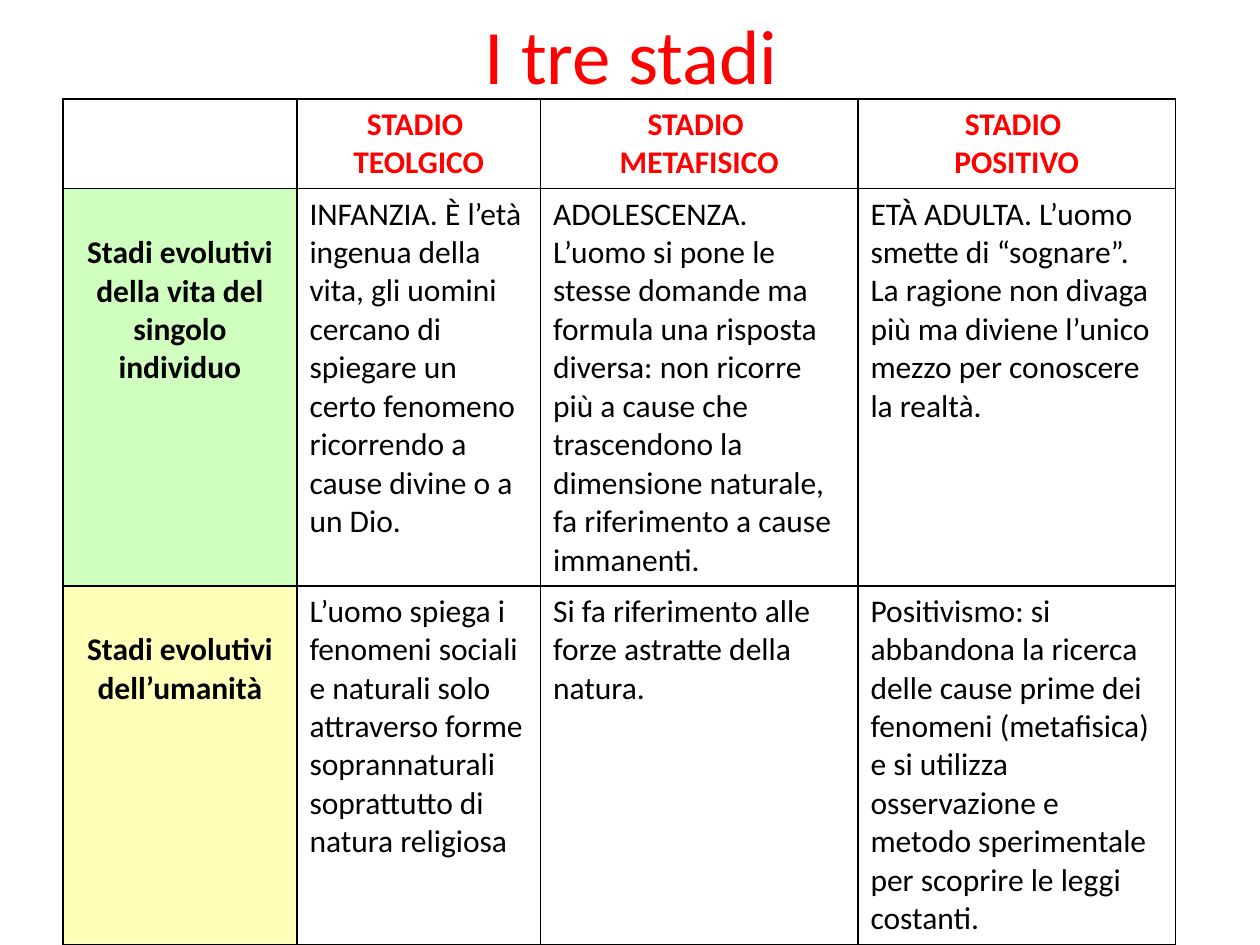
import pptx
import pptx.dml.color
import pptx.enum.text
import pptx.oxml
import pptx.oxml.ns
import pptx.util

Pt = pptx.util.Pt
ALIGN = pptx.enum.text.PP_ALIGN
ANCHOR = pptx.enum.text.MSO_ANCHOR
COLORS = {"red": "FF0000", "black": "000000", "white": "FFFFFF",
          "green": "CFFEBE", "yellow": "FFFFB9"}

# Content
TITLE = "I tre stadi"
HEADINGS = ["", "STADIO \nTEOLGICO", "STADIO \nMETAFISICO", "STADIO \nPOSITIVO"]
STAGES = [
    ("green", [
        "Stadi evolutivi della vita del singolo individuo",
        "INFANZIA. È l’età ingenua della vita, gli uomini cercano di spiegare un "
        "certo fenomeno ricorrendo a cause divine o a un Dio.",
        "ADOLESCENZA. L’uomo si pone le stesse domande ma formula una risposta "
        "diversa: non ricorre più a cause che trascendono la dimensione naturale, "
        "fa riferimento a cause immanenti.",
        "ETÀ ADULTA. L’uomo smette di “sognare”. La ragione non divaga più ma "
        "diviene l’unico mezzo per conoscere la realtà.",
    ]),
    ("yellow", [
        "Stadi evolutivi dell’umanità",
        "L’uomo spiega i fenomeni sociali e naturali solo attraverso forme "
        "soprannaturali soprattutto di natura religiosa",
        "Si fa riferimento alle forze astratte della natura.",
        "Positivismo: si abbandona la ricerca delle cause prime dei fenomeni "
        "(metafisica) e si utilizza osservazione e metodo sperimentale per "
        "scoprire le leggi costanti.",
    ]),
]
COLUMN_WIDTHS = [133.7, 139.2, 181.4, 181.4]
ROW_HEIGHTS = [50, 216, 197]
LABEL_TOP = 25.6  # cell margin plus one line of text


def rgb(name):
    return pptx.dml.color.RGBColor.from_string(COLORS[name])


def write(frame, text, size=18, color="black", bold=False, align=ALIGN.LEFT):
    for index, line in enumerate(text.split("\n")):
        para = frame.paragraphs[0] if index == 0 else frame.add_paragraph()
        para.alignment = align
        para.font.size = Pt(size)
        span = para.add_run()
        span.text = line
        span.font.name = "Calibri"
        span.font.size = Pt(size)
        span.font.bold = bold
        span.font.color.rgb = rgb(color)


def style_cell(cell, fill):
    properties = cell._tc.get_or_add_tcPr()
    for side in ("lnL", "lnR", "lnT", "lnB"):
        properties.append(pptx.oxml.parse_xml(
            f'<a:{side} {pptx.oxml.ns.nsdecls("a")} w="{Pt(1)}"><a:solidFill>'
            f'<a:srgbClr val="{COLORS["black"]}"/></a:solidFill></a:{side}>'))
    cell.fill.solid()
    cell.fill.fore_color.rgb = rgb(fill)


deck = pptx.Presentation()
deck.slide_width, deck.slide_height = Pt(720), Pt(540)
page = deck.slides.add_slide(deck.slide_layouts[5])

# Title
title = page.shapes.title
title.left, title.top, title.width, title.height = Pt(36.7), Pt(0), Pt(648), Pt(61.2)
title.text_frame.vertical_anchor = ANCHOR.MIDDLE
write(title.text_frame, TITLE, size=44, color="red", align=ALIGN.CENTER)

# Table
table = page.shapes.add_table(
    len(STAGES) + 1, len(HEADINGS), Pt(36), Pt(56.7),
    Pt(sum(COLUMN_WIDTHS)), Pt(sum(ROW_HEIGHTS))).table
table.first_row = table.horz_banding = False
for column, width in zip(table.columns, COLUMN_WIDTHS):
    column.width = Pt(width)
for row, height in zip(table.rows, ROW_HEIGHTS):
    row.height = Pt(height)

# Headings
for column, heading in enumerate(HEADINGS):
    cell = table.cell(0, column)
    style_cell(cell, "white")
    if heading:
        write(cell.text_frame, heading, color="red", bold=True, align=ALIGN.CENTER)

# Stages: a coloured label, then one description per column
for row, (label_fill, texts) in enumerate(STAGES, start=1):
    for column, text in enumerate(texts):
        cell = table.cell(row, column)
        is_label = column == 0
        style_cell(cell, label_fill if is_label else "white")
        if is_label:
            cell.margin_top = Pt(LABEL_TOP)
        write(cell.text_frame, text, bold=is_label,
              align=ALIGN.CENTER if is_label else ALIGN.LEFT)

deck.save("out.pptx")
